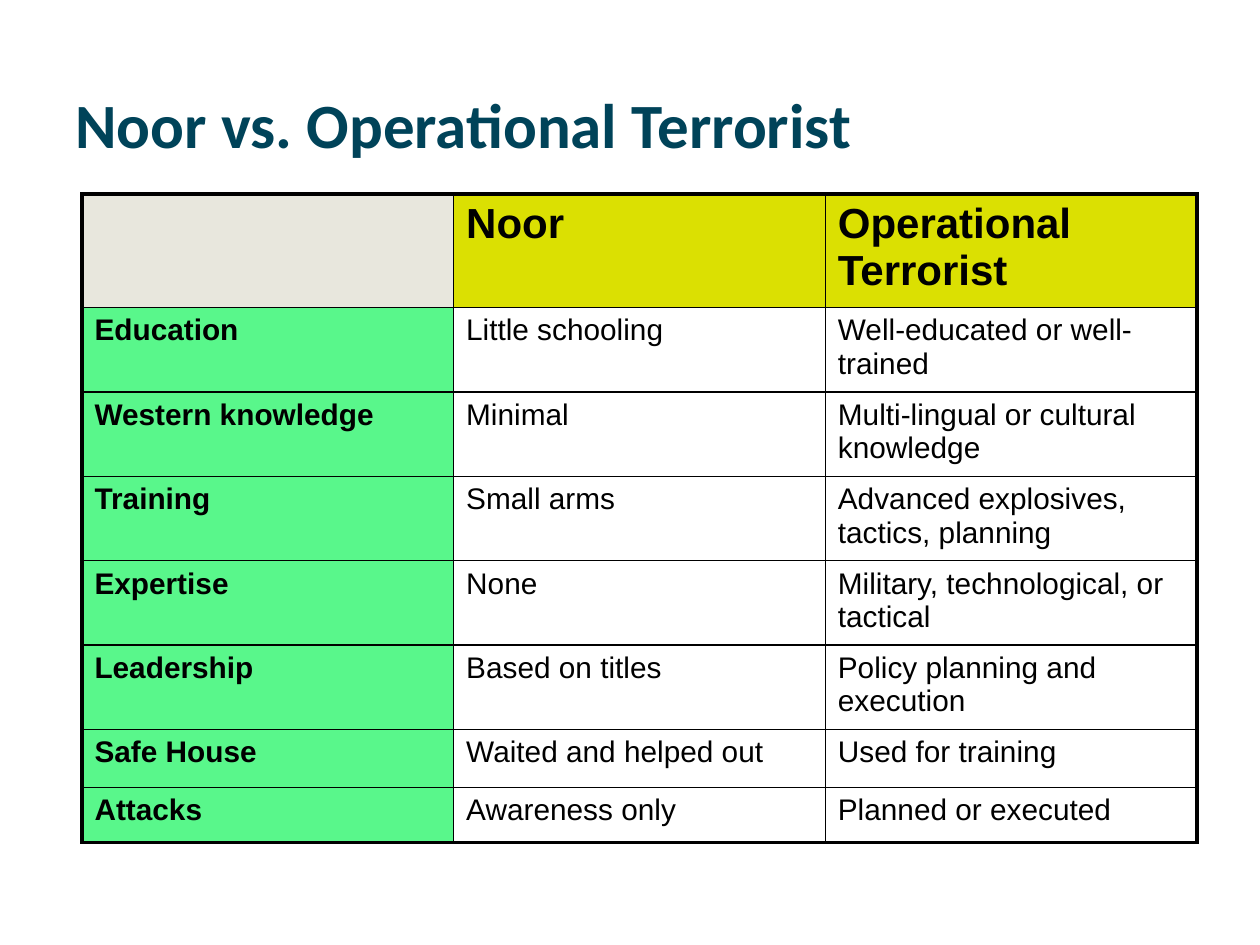
from lxml.etree import SubElement
from pptx import Presentation
from pptx.dml.color import RGBColor
from pptx.enum.text import MSO_ANCHOR
from pptx.oxml.ns import qn
from pptx.util import Inches, Pt

TEAL = RGBColor(0x00, 0x43, 0x59)
BLACK = RGBColor(0x00, 0x00, 0x00)
GREY = RGBColor(0xE8, 0xE7, 0xDD)
YELLOW = RGBColor(0xDB, 0xE0, 0x02)
GREEN = RGBColor(0x59, 0xF7, 0x8B)

ROWS = [
    ("", "Noor", "Operational Terrorist"),
    ("Education", "Little schooling", "Well-educated or well-trained"),
    ("Western knowledge", "Minimal", "Multi-lingual or cultural knowledge"),
    ("Training", "Small arms", "Advanced explosives, tactics, planning"),
    ("Expertise", "None", "Military, technological, or tactical"),
    ("Leadership", "Based on titles", "Policy planning and execution"),
    ("Safe House", "Waited and helped out", "Used for training"),
    ("Attacks", "Awareness only", "Planned or executed"),
]
ROW_HEIGHTS = [0.9] + [0.67] * 5 + [0.46, 0.44]


def add_run(p, text, font, size, color, bold):
    r = p.add_run()
    r.text = text
    r.font.name = font
    r.font.size = Pt(size)
    r.font.color.rgb = color
    r.font.bold = bold


def add_title(s, left, top, width, height):
    tf = s.shapes.add_textbox(left, top, width, height).text_frame
    tf.word_wrap = True
    tf.vertical_anchor = MSO_ANCHOR.BOTTOM
    p = tf.paragraphs[0]
    p.line_spacing = Pt(38)
    add_run(p, "Noor vs. Operational Terrorist", "Calibri", 36, TEAL, True)


def set_border(cell, side, width):
    tc_pr = cell._tc.get_or_add_tcPr()
    ln = SubElement(tc_pr, qn(f"a:ln{side}"), w=str(Pt(width)))
    fill = SubElement(ln, qn("a:solidFill"))
    SubElement(fill, qn("a:srgbClr"), val=str(BLACK))


def cell_color(row, col):
    if row == 0:
        return YELLOW if col else GREY
    return None if col else GREEN


def add_comparison(s, left, top, width, height):
    n_rows, n_cols = len(ROWS), len(ROWS[0])
    table = s.shapes.add_table(n_rows, n_cols, left, top, width, height).table
    table.first_row = False
    table.horz_banding = False
    for column in table.columns:
        column.width = width // n_cols
    for i, texts in enumerate(ROWS):
        table.rows[i].height = Inches(ROW_HEIGHTS[i])
        for j, text in enumerate(texts):
            cell = table.cell(i, j)
            outer = {"L": j == 0, "R": j == n_cols - 1,
                     "T": i == 0, "B": i == n_rows - 1}
            for side, is_outer in outer.items():
                set_border(cell, side, 2.25 if is_outer else 1)
            color = cell_color(i, j)
            if color is None:
                cell.fill.background()
            else:
                cell.fill.solid()
                cell.fill.fore_color.rgb = color
            if text:
                p = cell.text_frame.paragraphs[0]
                add_run(p, text, "Arial", 17 if i else 24, BLACK, i == 0 or j == 0)


def main():
    prs = Presentation()
    prs.slide_width, prs.slide_height = Inches(10), Inches(7.5)
    s = prs.slides.add_slide(prs.slide_layouts[6])
    add_title(s, Inches(0.5), Inches(0.43), Inches(9), Inches(0.9))
    add_comparison(s, Inches(0.65), Inches(1.54), Inches(8.85), Inches(sum(ROW_HEIGHTS)))
    prs.save("out.pptx")


if __name__ == "__main__":
    main()
